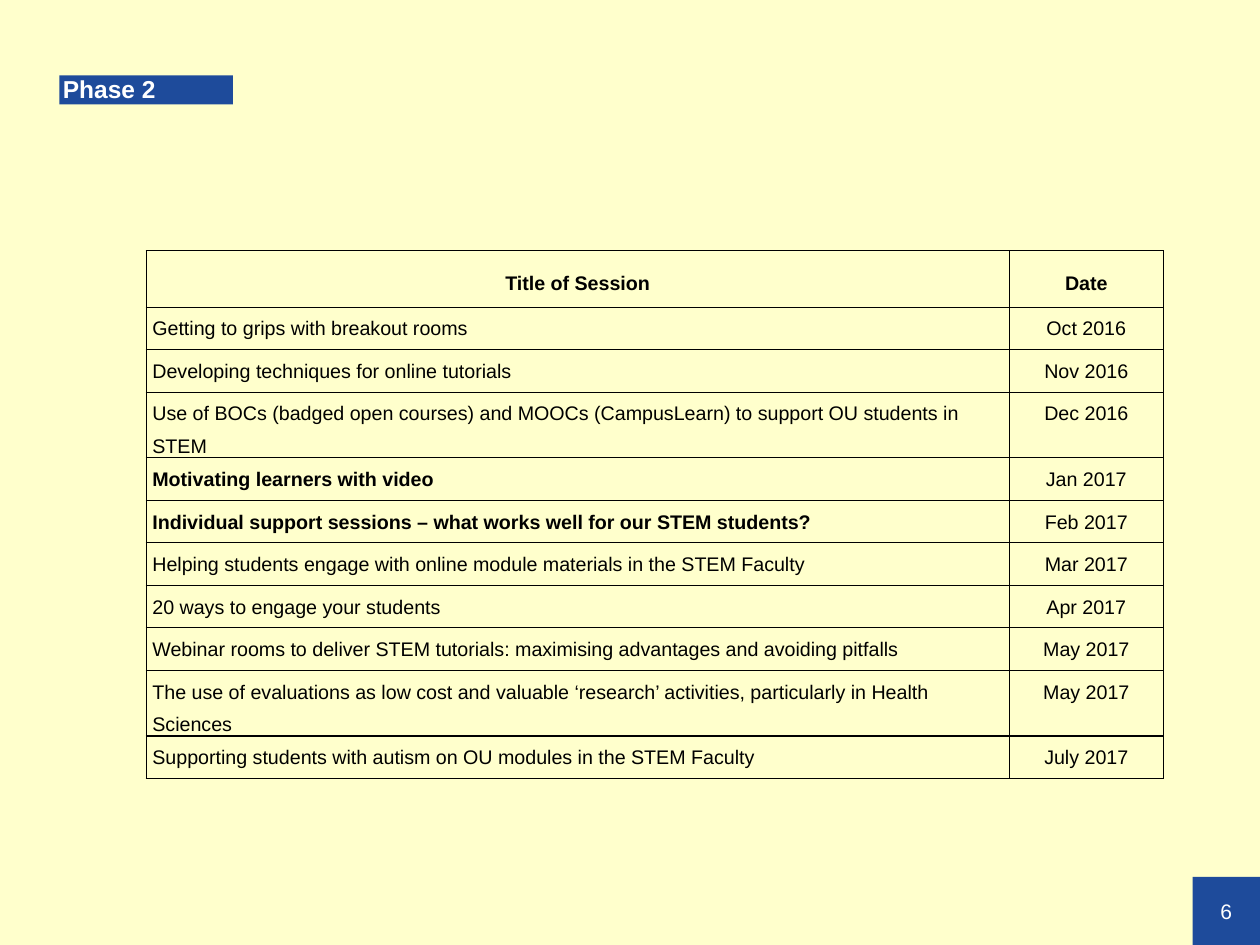
from lxml import etree
from pptx import Presentation
from pptx.dml.color import RGBColor
from pptx.enum.shapes import MSO_SHAPE
from pptx.enum.text import MSO_ANCHOR, MSO_AUTO_SIZE, PP_ALIGN
from pptx.oxml.ns import qn
from pptx.util import Inches, Pt

RECTANGLE = MSO_SHAPE.RECTANGLE
TOP, MIDDLE = MSO_ANCHOR.TOP, MSO_ANCHOR.MIDDLE
NO_AUTOFIT = MSO_AUTO_SIZE.NONE
LEFT, CENTER = PP_ALIGN.LEFT, PP_ALIGN.CENTER

COLORS = {"background": "FFFFCC", "blue": "1E4B9B", "white": "FFFFFF", "black": "000000"}
FONT = "Arial"
TITLE_COLUMN, DATE_COLUMN = 9.74, 1.74
HEADER_HEIGHT, ROW_HEIGHT = 0.64, 0.48
HEADER = ("Title of Session", "Date")
SESSIONS = [
    ("Getting to grips with breakout rooms", "Oct 2016"),
    ("Developing techniques for online tutorials", "Nov 2016"),
    ("Use of BOCs (badged open courses) and MOOCs (CampusLearn) to support OU students in STEM",
     "Dec 2016"),
    ("Motivating learners with video", "Jan 2017"),
    ("Individual support sessions – what works well for our STEM students?", "Feb 2017"),
    ("Helping students engage with online module materials in the STEM Faculty", "Mar 2017"),
    ("20 ways to engage your students", "Apr 2017"),
    ("Webinar rooms to deliver STEM tutorials: maximising advantages and avoiding pitfalls",
     "May 2017"),
    ("The use of evaluations as low cost and valuable ‘research’ activities, "
     "particularly in Health Sciences", "May 2017"),
    ("Supporting students with autism on OU modules in the STEM Faculty", "July 2017"),
]
BOLD_SESSIONS = {"Motivating learners with video",
                 "Individual support sessions – what works well for our STEM students?"}


def color(name):
    """Return the named colour of the slide's palette."""
    return RGBColor.from_string(COLORS[name])


def write_text(text_frame, text, size=16, ink="black", bold=False, align=LEFT, spacing=1.0):
    """Write one formatted paragraph into a text frame."""
    paragraph = text_frame.paragraphs[0]
    paragraph.alignment = align
    paragraph.line_spacing = spacing
    paragraph.space_before = Pt(0)
    run = paragraph.add_run()
    run.text = text
    run.font.name = FONT
    run.font.size = Pt(size)
    run.font.bold = bold
    run.font.color.rgb = color(ink)


def set_margins(holder, left, top, right, bottom):
    """Set the inner margins of a text frame or table cell in inches."""
    holder.margin_left, holder.margin_top = Inches(left), Inches(top)
    holder.margin_right, holder.margin_bottom = Inches(right), Inches(bottom)


def add_heading(slide, left, top, width, height):
    """Place the title placeholder as a blue label."""
    title = slide.shapes.title
    title.left, title.top = Inches(left), Inches(top)
    title.width, title.height = Inches(width), Inches(height)
    title.fill.solid()
    title.fill.fore_color.rgb = color("blue")
    text_frame = title.text_frame
    text_frame.auto_size = NO_AUTOFIT
    text_frame.word_wrap = True
    text_frame.vertical_anchor = MIDDLE
    set_margins(text_frame, 0.04, 0.02, 0, 0)
    write_text(text_frame, "Phase 2", size=19.9, ink="white", bold=True, spacing=0.9)


def add_page_number(slide, left, top, width, height):
    """Place the blue page number block."""
    block = slide.shapes.add_shape(
        RECTANGLE, Inches(left), Inches(top), Inches(width), Inches(height))
    block.shadow.inherit = False
    block.fill.solid()
    block.fill.fore_color.rgb = color("blue")
    block.line.fill.background()
    block.text_frame.vertical_anchor = MIDDLE
    set_margins(block.text_frame, 0, 0, 0, 0)
    write_text(block.text_frame, "6", size=17.1, ink="white", align=CENTER)


def add_borders(cell):
    """Draw a thin black line on each side of a cell."""
    properties = cell._tc.get_or_add_tcPr()
    for position, side in enumerate(("a:lnL", "a:lnR", "a:lnT", "a:lnB")):
        line = etree.Element(qn(side), w=str(Pt(1)))
        fill = etree.SubElement(line, qn("a:solidFill"))
        etree.SubElement(fill, qn("a:srgbClr"), val=COLORS["black"])
        properties.insert(position, line)


def add_session_table(slide, left, top):
    """Place the table of sessions and dates."""
    rows = [HEADER, *SESSIONS]
    height = HEADER_HEIGHT + ROW_HEIGHT * len(SESSIONS)
    table = slide.shapes.add_table(
        len(rows), len(HEADER), Inches(left), Inches(top),
        Inches(TITLE_COLUMN + DATE_COLUMN), Inches(height)).table
    table.first_row = True
    table.horz_banding = False
    for column, width in zip(table.columns, (TITLE_COLUMN, DATE_COLUMN)):
        column.width = Inches(width)
    for row_index, texts in enumerate(rows):
        is_header = row_index == 0
        table.rows[row_index].height = Inches(HEADER_HEIGHT if is_header else ROW_HEIGHT)
        for column_index, text in enumerate(texts):
            cell = table.cell(row_index, column_index)
            cell.fill.background()
            cell.vertical_anchor = TOP
            set_margins(cell, 0.07, 0, 0.07, 0)
            add_borders(cell)
            write_text(cell.text_frame, text,
                       bold=is_header or text in BOLD_SESSIONS,
                       align=CENTER if is_header or column_index == 1 else LEFT,
                       spacing=2.0 if is_header else 1.5)


def main():
    """Build and save the slide."""
    presentation = Presentation()
    presentation.slide_width = Inches(14.22)
    presentation.slide_height = Inches(10.67)
    slide = presentation.slides.add_slide(presentation.slide_layouts[5])
    slide.background.fill.solid()
    slide.background.fill.fore_color.rgb = color("background")
    add_page_number(slide, 13.46, 9.9, 0.76, 0.77)
    add_heading(slide, 0.67, 0.85, 1.96, 0.33)
    add_session_table(slide, 1.65, 2.83)
    presentation.save("out.pptx")


if __name__ == "__main__":
    main()
